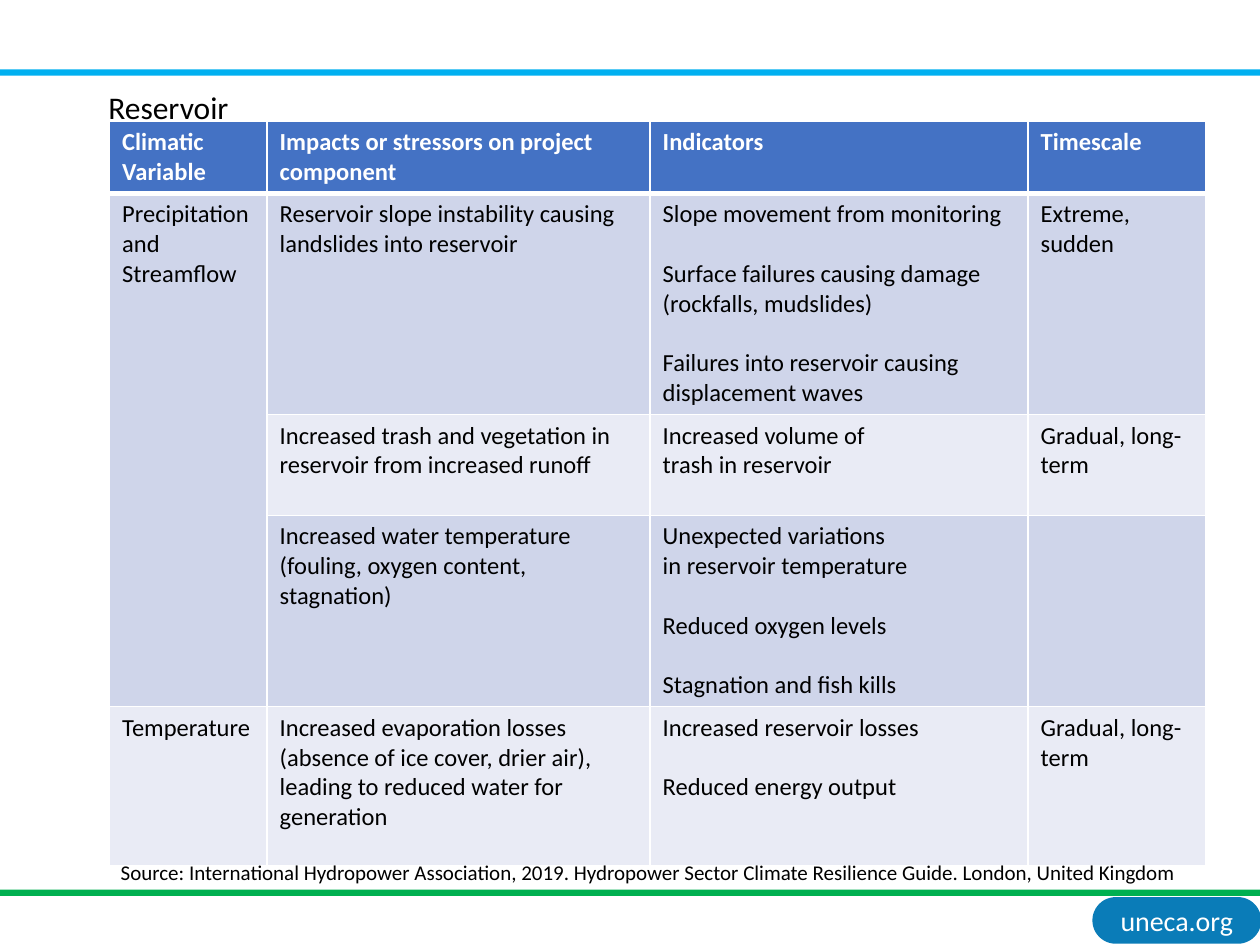
"""Build the slide on reservoir climate stressors."""
import pptx
import pptx.dml.color
import pptx.enum.shapes
import pptx.enum.text
import pptx.oxml
import pptx.oxml.ns
import pptx.util
from pptx.util import Inches

FONT = "Calibri"
COLOURS = {
    "header": "4472C4", "dark band": "CFD5EA", "light band": "E9EBF5",
    "blue rule": "00B0F0", "green rule": "00B050", "badge": "0A7CB8",
    "white": "FFFFFF", "black": "000000",
}
TITLE = "Reservoir"
SOURCE = ("Source: International Hydropower Association, 2019. Hydropower Sector "
          "Climate Resilience Guide. London, United Kingdom")
SITE = "uneca.org"
ROWS = [
    ("Climatic Variable", "Impacts or stressors on project component", "Indicators", "Timescale"),
    ("Precipitation and Streamflow",
     "Reservoir slope instability causing\nlandslides into reservoir",
     "Slope movement from monitoring\n\n"
     "Surface failures causing damage (rockfalls, mudslides)\n\n"
     "Failures into reservoir causing displacement waves",
     "Extreme, sudden"),
    ("", "Increased trash and vegetation in reservoir from increased runoff",
     "Increased volume of\ntrash in reservoir", "Gradual, long-term"),
    ("", "Increased water temperature (fouling, oxygen content,\nstagnation)",
     "Unexpected variations\nin reservoir temperature\n\n"
     "Reduced oxygen levels\n\nStagnation and fish kills", ""),
    ("Temperature",
     "Increased evaporation losses (absence of ice cover, drier air), "
     "leading to reduced water for generation",
     "Increased reservoir losses\n\nReduced energy output", "Gradual, long-term"),
]
COLUMN_WIDTHS = (1.25, 3.04, 3, 1.41)
ROW_HEIGHTS = (0.56, 1.73, 0.8, 1.5, 1.26)
RULES = [(0.55, "blue rule"), (7.06, "green rule")]
BLOCK_GAP = 17


def colour(name):
    return pptx.dml.color.RGBColor.from_string(COLOURS[name])


def style(para, size, colour_name, bold=False):
    para.font.name = FONT
    para.font.size = pptx.util.Pt(size)
    para.font.bold = bold
    para.font.color.rgb = colour(colour_name)


def place(shape, left, top, width, height):
    shape.left, shape.top = Inches(left), Inches(top)
    shape.width, shape.height = Inches(width), Inches(height)


def add_filled(page, kind, frame, colour_name):
    shape = page.shapes.add_shape(kind, *map(Inches, frame))
    shape.shadow.inherit = False
    shape.fill.solid()
    shape.fill.fore_color.rgb = colour(colour_name)
    shape.line.fill.background()
    return shape


def set_borders(cell, widths):
    properties = cell._tc.get_or_add_tcPr()
    for side, points in widths.items():
        properties.append(pptx.oxml.parse_xml(
            f'<a:ln{side} {pptx.oxml.ns.nsdecls("a")} w="{pptx.util.Pt(points)}">'
            f'<a:solidFill><a:srgbClr val="{COLOURS["white"]}"/></a:solidFill></a:ln{side}>'))


def write_cell(cell, text, header):
    frame = cell.text_frame
    para = frame.paragraphs[0]
    for block_index, block in enumerate(text.split("\n\n")):
        for line_index, line in enumerate(block.split("\n")):
            if block_index or line_index:
                para = frame.add_paragraph()
            if block_index and not line_index:
                para.space_before = pptx.util.Pt(BLOCK_GAP)
            para.text = line
            style(para, 14, "white" if header else "black", header)


def add_stressor_table(page):
    holder = page.shapes.add_table(
        len(ROWS), len(COLUMN_WIDTHS), Inches(0.87), Inches(0.96),
        Inches(sum(COLUMN_WIDTHS)), Inches(sum(ROW_HEIGHTS)))
    table = holder.table
    for column, width in zip(table.columns, COLUMN_WIDTHS):
        column.width = Inches(width)
    for row_index, (row, height) in enumerate(zip(ROWS, ROW_HEIGHTS)):
        table.rows[row_index].height = Inches(height)
        header = row_index == 0
        band = "header" if header else ("light band", "dark band")[row_index % 2]
        for column_index, text in enumerate(row):
            cell = table.cell(row_index, column_index)
            write_cell(cell, text, header)
            set_borders(cell, {"L": 1, "R": 1, "T": 3 if row_index == 1 else 1,
                               "B": 3 if header else 1})
            cell.fill.solid()
            cell.fill.fore_color.rgb = colour(band)
    table.cell(1, 0).merge(table.cell(3, 0))


def main():
    deck = pptx.Presentation()
    deck.slide_width, deck.slide_height = Inches(10), Inches(7.5)
    page = deck.slides.add_slide(deck.slide_layouts[5])
    shapes = pptx.enum.shapes.MSO_SHAPE

    badge = add_filled(page, shapes.ROUNDED_RECTANGLE, (8.67, 7.12, 1.34, 0.37), "badge")
    badge.adjustments[0] = 0.5
    frame = badge.text_frame
    frame.margin_left = frame.margin_right = Inches(0.05)
    frame.margin_top = frame.margin_bottom = Inches(0.05)
    frame.text = SITE
    frame.paragraphs[0].alignment = pptx.enum.text.PP_ALIGN.CENTER
    style(frame.paragraphs[0], 16, "white")

    for top, name in RULES:
        add_filled(page, shapes.RECTANGLE, (0, top, 10, 0.05), name)

    add_stressor_table(page)

    title = page.shapes.title
    place(title, 0.76, 0.65, 1.17, 0.4)
    source = page.shapes.add_textbox(*map(Inches, (0.86, 6.77, 9.3, 0.3)))
    for box, text, size in ((title, TITLE, 18), (source, SOURCE, 12)):
        frame = box.text_frame
        frame.text = text
        frame.word_wrap = box is source
        frame.auto_size = pptx.enum.text.MSO_AUTO_SIZE.NONE
        frame.vertical_anchor = pptx.enum.text.MSO_ANCHOR.TOP
        frame.paragraphs[0].alignment = pptx.enum.text.PP_ALIGN.LEFT
        style(frame.paragraphs[0], size, "black")

    deck.save("out.pptx")


if __name__ == "__main__":
    main()
